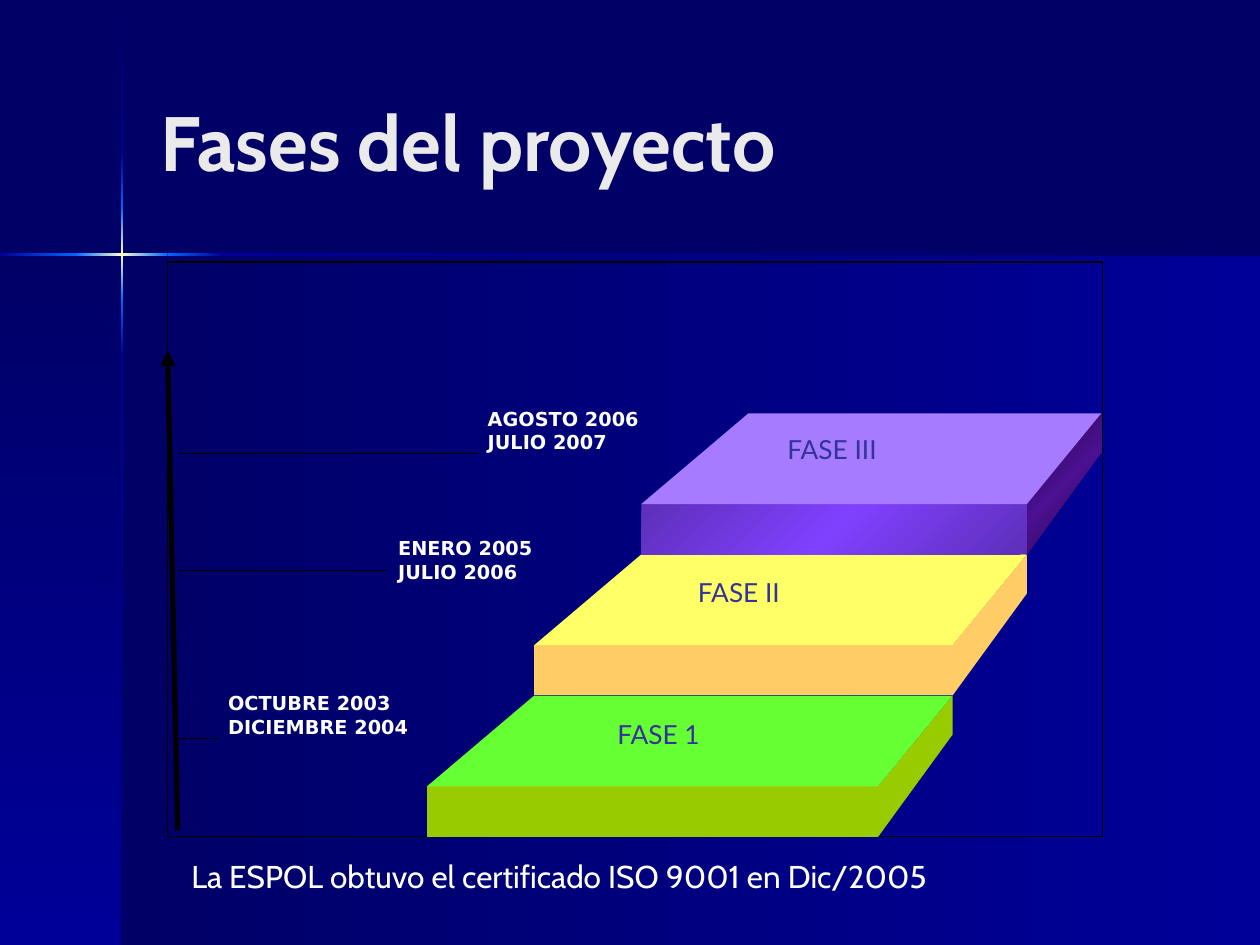
from copy import deepcopy
from lxml import etree
from pptx import Presentation
from pptx.dml.color import RGBColor
from pptx.enum import shapes, text
from pptx.oxml.ns import qn
from pptx.util import Inches, Pt

COLORS = {
    "navy": "000066", "blue": "000099", "azure": "0066FF", "cream": "FFFFCC",
    "title": "EAEAEA", "white": "FFFFFF", "black": "000000", "label": "333399",
    "lime": "66FF33", "olive": "99CC00", "yellow": "FFFF66", "orange": "FFCC66",
    "lilac": "A77BFF", "violet": "8041FF", "purple": "5D2FB9",
    "plum": "4B1092", "dark plum": "230744",
}
RGB = {name: RGBColor.from_string(value) for name, value in COLORS.items()}

presentation = Presentation()
presentation.slide_width, presentation.slide_height = Inches(10), Inches(7.5)
COLUMN = presentation.slide_width / 10
ROW = presentation.slide_height / 7.5
slide = presentation.slides.add_slide(presentation.slide_layouts[5])
slide.background.fill.solid()
slide.background.fill.fore_color.rgb = RGB["navy"]


def draw_polygon(points, colors, angle=0):
    corners = [(round(x * COLUMN), round(y * ROW)) for x, y in points]
    builder = slide.shapes.build_freeform(*corners[0])
    builder.add_line_segments(corners[1:], close=True)
    shape = builder.convert_to_shape()
    shape.shadow.inherit = False
    shape.line.fill.background()
    if len(colors) == 1:
        shape.fill.solid()
        shape.fill.fore_color.rgb = RGB[colors[0]]
        return
    shape.fill.gradient()
    shape.fill.gradient_angle = -angle % 360
    stop_list = next(shape._element.iter(qn("a:gsLst")))
    if len(colors) == 3:
        stop_list.insert(1, deepcopy(stop_list[0]))
    for index, (stop, color) in enumerate(zip(shape.fill.gradient_stops, colors)):
        stop.position = index / (len(colors) - 1)
        stop.color.rgb = RGB[color]


def add_text(left, top, width, height, lines, font, size, color, bold=False):
    box = slide.shapes.add_textbox(left * COLUMN, top * ROW, width * COLUMN, height * ROW)
    frame = box.text_frame
    frame.word_wrap = True
    frame.margin_left = frame.margin_right = Inches(0.08)
    frame.margin_top = frame.margin_bottom = Inches(0.04)
    frame.text = "\n".join(lines)
    for paragraph in frame.paragraphs:
        paragraph.font.name, paragraph.font.size = font, Pt(size)
        paragraph.font.bold = bold
        paragraph.font.color.rgb = RGB[color]
    return frame


glow = ["azure", "cream", "azure"]
bands = [
    (0.97, 2.02, 10, 7.5, ["navy", "blue"], 0),
    (0, 2.02, 0.97, 7.5, ["navy", "blue"], 90),
    (0.96, 0.01, 0.98, 1.21, ["navy", "blue"], 90),
    (0.96, 2.82, 0.98, 7.5, ["blue", "navy"], 90),
    (1.77, 2.01, 10, 2.03, ["blue", "navy"], 0),
    (0.96, 2.38, 0.98, 2.82, ["azure", "blue"], 90),
    (0.96, 1.21, 0.98, 1.65, ["blue", "azure"], 90),
    (0.96, 1.65, 0.98, 2.38, glow, 90),
    (0, 2.01, 0.61, 2.03, ["blue", "azure"], 0),
    (1.33, 2.01, 1.77, 2.03, ["azure", "blue"], 0),
    (0.6, 2.01, 1.33, 2.03, glow, 0),
]
for left, top, right, bottom, colors, angle in bands:
    draw_polygon([(left, top), (right, top), (right, bottom), (left, bottom)], colors, angle)

title = slide.shapes.title
title.left, title.top = round(1.17 * COLUMN), round(0.33 * ROW)
title.width, title.height = round(8.25 * COLUMN), round(1.57 * ROW)
title.text_frame.text = "Fases del proyecto"
title.text_frame.vertical_anchor = text.MSO_ANCHOR.MIDDLE
paragraph = title.text_frame.paragraphs[0]
paragraph.alignment = text.PP_ALIGN.LEFT
paragraph.font.name, paragraph.font.size, paragraph.font.bold = "Cabin", Pt(44), True
paragraph.font.color.rgb = RGB["title"]

frame_box = slide.shapes.add_shape(
    shapes.MSO_SHAPE.RECTANGLE, 1.33 * COLUMN, 2.08 * ROW, 7.42 * COLUMN, 4.56 * ROW)
frame_box.shadow.inherit = False
frame_box.fill.background()
frame_box.line.color.rgb = RGB["black"]
frame_box.line.width = Pt(0.75)

steps = [
    (["lime"], ["olive"], ["olive"]),
    (["yellow"], ["orange"], ["orange"]),
    (["lilac"], ["purple", "violet", "purple"], ["dark plum", "plum", "dark plum"]),
]
for level, (top_colors, front_colors, side_colors) in enumerate(steps):
    left, right = 3.39 + 0.85 * level, 6.97 + 0.59 * level
    edge = 6.24 - 1.12 * level
    back, base = edge - 0.72, edge + 0.4
    draw_polygon([(right, edge), (right + 0.59, back), (right + 0.59, back + 0.31),
                  (right, base)], side_colors, 45)
    draw_polygon([(left, edge), (right, edge), (right, base), (left, base)], front_colors, 45)
    draw_polygon([(left, edge), (left + 0.85, back), (right + 0.59, back), (right, edge)],
                 top_colors)

connectors = [(1.41, 6.59, 1.33, 2.78, 3)]
phases = [
    ("FASE 1", 4.82, 5.66, ["OCTUBRE 2003", "DICIEMBRE 2004"], 1.73, 5.45, 5.86),
    ("FASE II", 5.46, 4.53, ["ENERO 2005", "JULIO 2006"], 3.08, 4.22, 4.53),
    ("FASE III", 6.17, 3.4, ["AGOSTO 2006", "JULIO 2007"], 3.79, 3.19, 3.6),
]
for name, name_left, name_top, dates, date_left, date_top, mark in phases:
    add_text(name_left, name_top, 2, 0.57, [name], "Lato", 15, "label")
    add_text(date_left, date_top, 1.81, 0.74, dates, "DejaVu Sans", 11, "white", True)
    connectors.append((1.41, mark, date_left, mark, 0.75))

for x1, y1, x2, y2, width in connectors:
    connector = slide.shapes.add_connector(
        shapes.MSO_CONNECTOR.STRAIGHT, round(x1 * COLUMN), round(y1 * ROW),
        round(x2 * COLUMN), round(y2 * ROW))
    connector.line.color.rgb = RGB["black"]
    connector.line.width = Pt(width)
    if width == 3:
        etree.SubElement(connector.line._get_or_add_ln(), qn("a:tailEnd"), type="triangle")
    etree.SubElement(connector._element.spPr, qn("a:effectLst"))

note = add_text(1.42, 6.75, 6.1, 0.4, ["La ESPOL obtuvo el certificado ISO 9001 en Dic/2005"],
                "Cabin", 18, "white")
note.margin_left = note.margin_right = Inches(0.1)
note.word_wrap = False
note.auto_size = text.MSO_AUTO_SIZE.SHAPE_TO_FIT_TEXT
note.vertical_anchor = text.MSO_ANCHOR.MIDDLE
note.paragraphs[0].alignment = text.PP_ALIGN.JUSTIFY

presentation.save("out.pptx")
